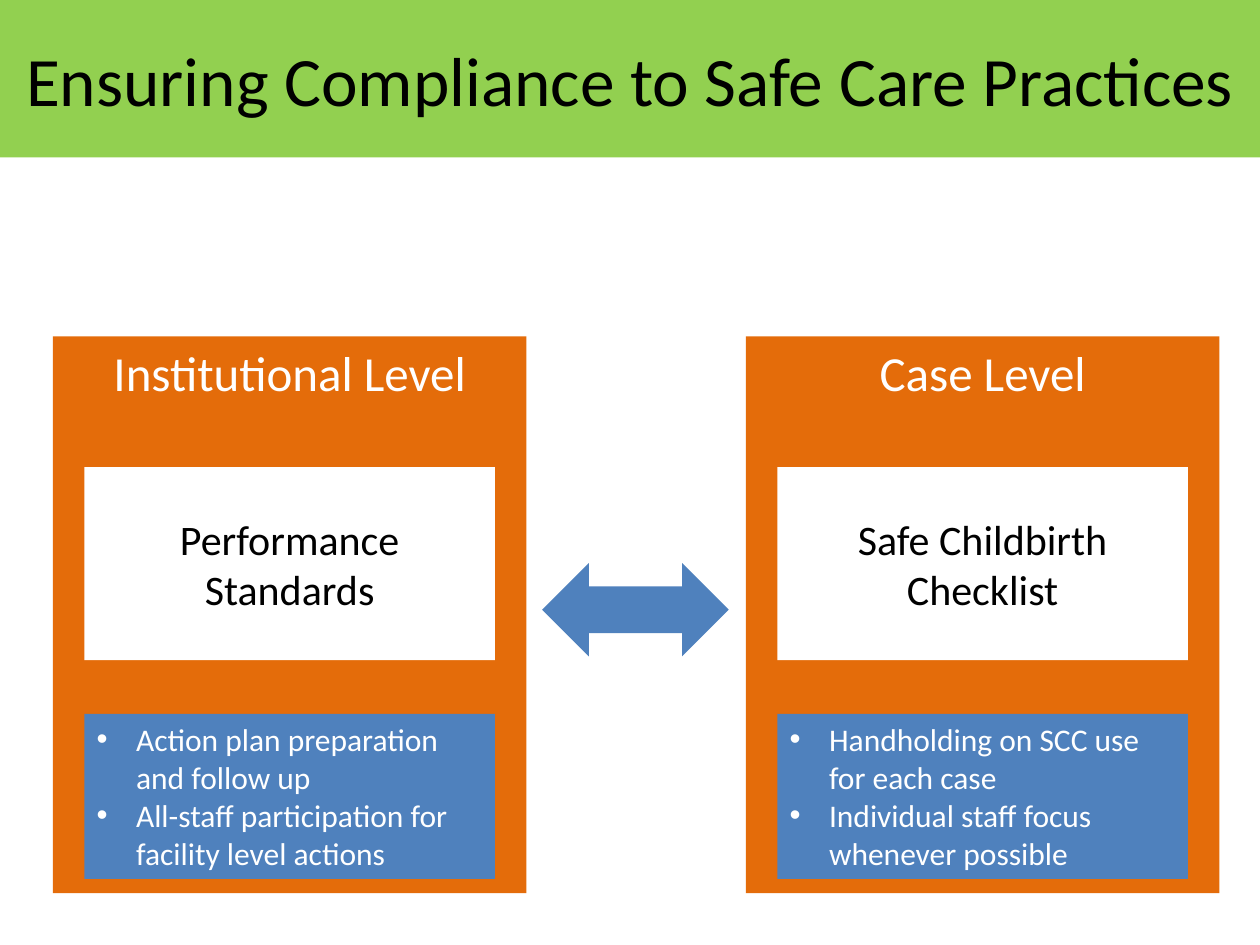
from lxml import etree
from pptx import Presentation
from pptx.dml.color import RGBColor
from pptx.enum.shapes import MSO_SHAPE
from pptx.enum.text import MSO_ANCHOR, PP_ALIGN
from pptx.oxml.ns import qn
from pptx.util import Pt

RECTANGLE, ARROW = MSO_SHAPE.RECTANGLE, MSO_SHAPE.LEFT_RIGHT_ARROW
TOP, MIDDLE = MSO_ANCHOR.TOP, MSO_ANCHOR.MIDDLE
LEFT, CENTER = PP_ALIGN.LEFT, PP_ALIGN.CENTER

COLOURS = {
    "green": "92D050",
    "orange": "E46C0A",
    "blue": "4F81BD",
    "white": "FFFFFF",
    "black": "000000",
}
FORMATS = {
    "title": {"size": Pt(39.6), "name": "Calibri"},
    "heading": {"size": Pt(28), "name": "Calibri"},
    "tool": {"size": Pt(24), "name": "Calibri"},
    "action": {"size": Pt(18), "name": "Calibri"},
}
PANEL_TOP, PANEL_WIDTH, PANEL_HEIGHT = 192.2, 270.7, 318.2
INSET = 18
BULLET_INDENT = 22.5
LEVELS = [
    (30.2, "Institutional Level", "Performance Standards",
     ["Action plan preparation and follow up",
      "All-staff participation for facility level actions"]),
    (426.2, "Case Level", "Safe Childbirth Checklist",
     ["Handholding on SCC use for each case",
      "Individual staff focus whenever possible"]),
]


def add_block(slide, kind, bounds, fill):
    """Add a filled shape without outline or shadow."""
    block = slide.shapes.add_shape(kind, *[Pt(length) for length in bounds])
    block.shadow.inherit = False
    block.fill.solid()
    block.fill.fore_color.rgb = RGBColor.from_string(COLOURS[fill])
    block.line.fill.background()
    return block


def write_lines(block, lines, style, colour, anchor=TOP, align=CENTER):
    """Write one paragraph per line and return the paragraphs."""
    frame = block.text_frame
    frame.word_wrap = True
    frame.vertical_anchor = anchor
    for index, line in enumerate(lines):
        para = frame.add_paragraph() if index else frame.paragraphs[0]
        para.alignment = align
        span = para.add_run()
        span.text = line
        for attribute, value in FORMATS[style].items():
            setattr(span.font, attribute, value)
        span.font.color.rgb = RGBColor.from_string(COLOURS[colour])
    return frame.paragraphs


def add_bullet(para):
    """Give a paragraph a round bullet with a hanging indent."""
    properties = para._p.get_or_add_pPr()
    properties.set("marL", str(Pt(BULLET_INDENT)))
    properties.set("indent", str(-Pt(BULLET_INDENT)))
    etree.SubElement(properties, qn("a:buFont"), typeface="Arial")
    etree.SubElement(properties, qn("a:buChar"), char="•")


def add_level(slide, left, heading, tool, actions):
    """Add a level panel with its tool box and its action list."""
    inner_left, inner_width = left + INSET, PANEL_WIDTH - 2 * INSET
    panel = add_block(slide, RECTANGLE, (left, PANEL_TOP, PANEL_WIDTH, PANEL_HEIGHT), "orange")
    write_lines(panel, [heading], "heading", "white")
    tool_box = add_block(slide, RECTANGLE, (inner_left, 267, inner_width, 110.2), "white")
    write_lines(tool_box, [tool], "tool", "black", MIDDLE)
    action_box = add_block(slide, RECTANGLE, (inner_left, 408, inner_width, 94.3), "blue")
    for para in write_lines(action_box, actions, "action", "white", align=LEFT):
        add_bullet(para)


def main():
    """Build the slide and save the deck."""
    deck = Presentation()
    deck.slide_width, deck.slide_height = Pt(720), Pt(540)
    slide = deck.slides.add_slide(deck.slide_layouts[6])
    banner = add_block(slide, RECTANGLE, (0, 0, 720, 90), "green")
    write_lines(banner, ["Ensuring Compliance to Safe Care Practices"], "title", "black", MIDDLE)
    for level in LEVELS:
        add_level(slide, *level)
    add_block(slide, ARROW, (309.8, 321.8, 106.6, 53.3), "blue")
    deck.save("out.pptx")


if __name__ == "__main__":
    main()
